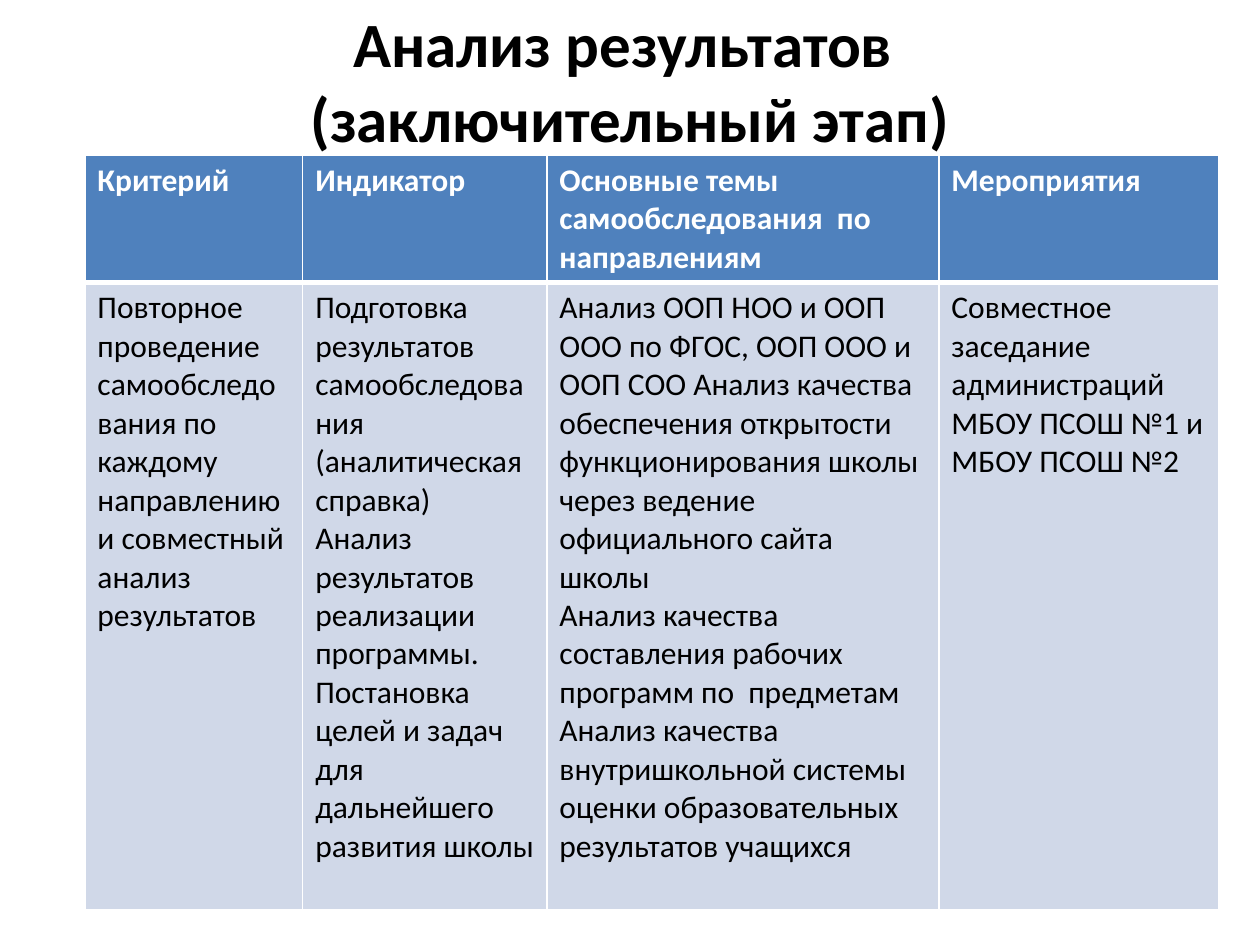
from lxml.etree import SubElement
from pptx import Presentation
from pptx.dml.color import RGBColor
from pptx.enum.text import MSO_ANCHOR, PP_ALIGN
from pptx.oxml.ns import qn
from pptx.util import Pt

FONT = "Calibri"
COLORS = {
    "header": "4F81BD",
    "body": "D0D8E8",
    "light": "FFFFFF",
    "dark": "000000",
}
TITLE = "Анализ результатов \v(заключительный этап)"
COLUMN_WIDTHS = [124.5, 139.5, 224, 160]
ROW_HEIGHTS = [73, 358.5]
HEADERS = [
    "Критерий",
    "Индикатор",
    "Основные темы  самообследования  по направлениям",
    "Мероприятия",
]
DETAILS = [
    "Повторное проведение самообследования по каждому направлению "
    "и совместный анализ результатов",
    "Подготовка результатов самообследования (аналитическая справка)\n"
    "Анализ результатов реализации программы. Постановка целей и задач "
    "для дальнейшего развития школы",
    "Анализ ООП НОО и ООП ООО по ФГОС, ООП ООО и ООП СОО "
    "Анализ качества обеспечения открытости функционирования школы "
    "через ведение  официального сайта школы\n"
    "Анализ качества составления рабочих программ по  предметам\n"
    "Анализ качества внутришкольной системы оценки образовательных "
    "результатов учащихся",
    "Совместное заседание администраций МБОУ ПСОШ №1 и МБОУ ПСОШ №2",
]


def color(name):
    return RGBColor.from_string(COLORS[name])


def style_text(frame, size, bold, color_name, align):
    for paragraph in frame.paragraphs:
        paragraph.alignment = align
        font = paragraph.font
        font.name, font.size, font.bold = FONT, Pt(size), bold
        font.color.rgb = color(color_name)


def add_title(slide):
    box = slide.shapes.add_textbox(Pt(36), Pt(21.6), Pt(648), Pt(90))
    frame = box.text_frame
    frame.word_wrap = True
    frame.vertical_anchor = MSO_ANCHOR.MIDDLE
    # The deep bottom inset lifts the heading clear of the table.
    frame.margin_top, frame.margin_bottom = Pt(0), Pt(42)
    frame.text = TITLE
    style_text(frame, 36, True, "dark", PP_ALIGN.CENTER)


def set_borders(cell, bottom_width):
    """Draw white cell borders; they must precede the fill in tcPr."""
    properties = cell._tc.get_or_add_tcPr()
    widths = {"a:lnL": 1, "a:lnR": 1, "a:lnT": 1, "a:lnB": bottom_width}
    for tag, width in widths.items():
        line = SubElement(properties, qn(tag), w=str(Pt(width)))
        fill = SubElement(line, qn("a:solidFill"))
        SubElement(fill, qn("a:srgbClr"), val=COLORS["light"])


def fill_row(table, row, texts, fill_name, text_color, bold, bottom_width):
    for column, text in enumerate(texts):
        cell = table.cell(row, column)
        cell.text = text
        style_text(cell.text_frame, 18, bold, text_color, PP_ALIGN.LEFT)
        set_borders(cell, bottom_width)
        cell.fill.solid()
        cell.fill.fore_color.rgb = color(fill_name)


def add_results_table(slide):
    table = slide.shapes.add_table(
        len(ROW_HEIGHTS), len(COLUMN_WIDTHS), Pt(48.5), Pt(88.5),
        Pt(sum(COLUMN_WIDTHS)), Pt(sum(ROW_HEIGHTS)),
    ).table
    for column, width in zip(table.columns, COLUMN_WIDTHS):
        column.width = Pt(width)
    for row, height in zip(table.rows, ROW_HEIGHTS):
        row.height = Pt(height)
    fill_row(table, 0, HEADERS, "header", "light", True, 3)
    fill_row(table, 1, DETAILS, "body", "dark", False, 1)


def main():
    presentation = Presentation()
    presentation.slide_width, presentation.slide_height = Pt(720), Pt(540)
    slide = presentation.slides.add_slide(presentation.slide_layouts[6])
    add_title(slide)
    add_results_table(slide)
    presentation.save("out.pptx")


if __name__ == "__main__":
    main()
